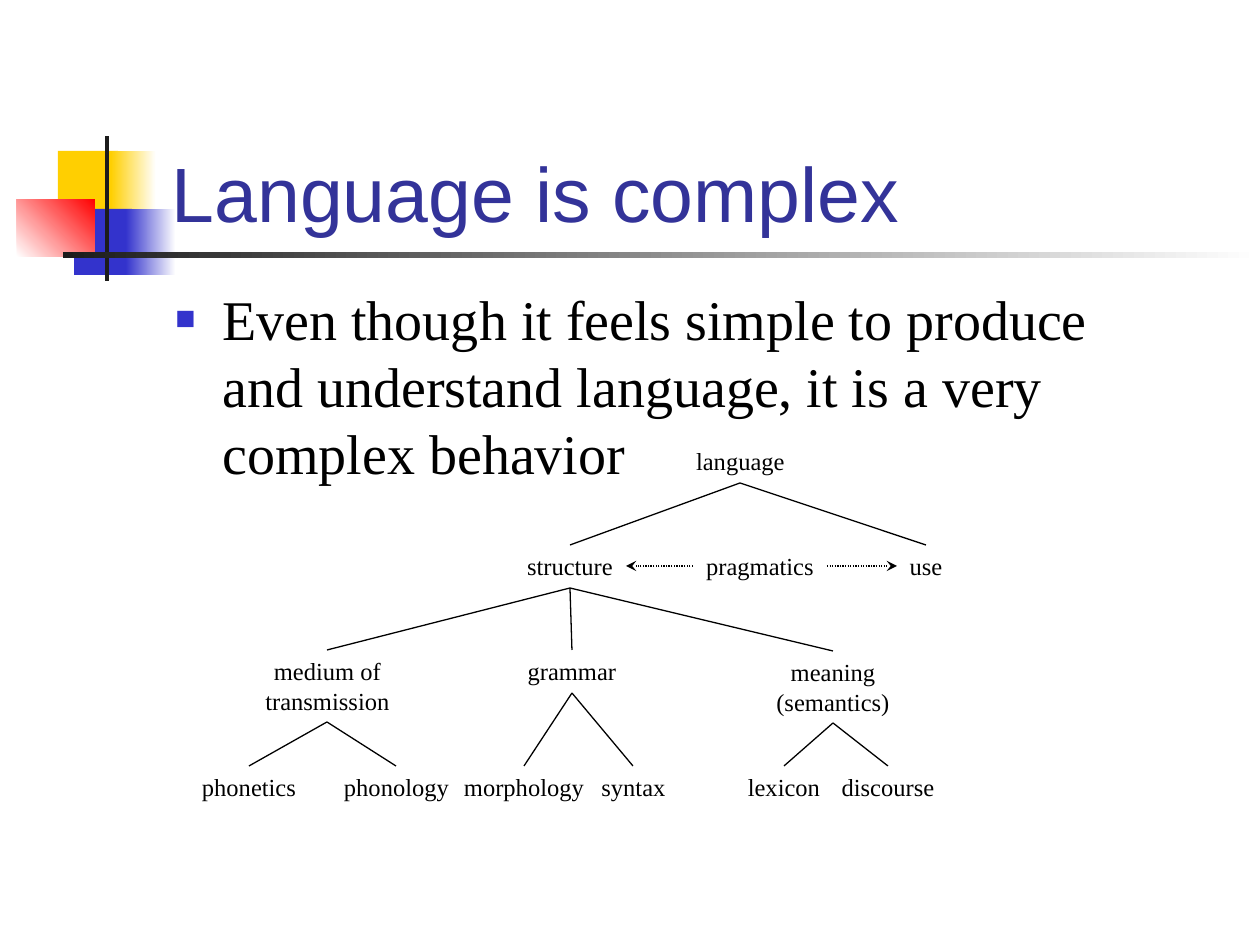
from dataclasses import dataclass

from lxml import etree
from pptx import Presentation
from pptx.dml.color import RGBColor
from pptx.enum.dml import MSO_LINE
from pptx.enum.shapes import MSO_CONNECTOR, MSO_SHAPE
from pptx.enum.text import MSO_ANCHOR, MSO_AUTO_SIZE, PP_ALIGN
from pptx.oxml.ns import qn
from pptx.util import Pt

PX = 914400 / 126
RECTANGLE = MSO_SHAPE.RECTANGLE
STRAIGHT = MSO_CONNECTOR.STRAIGHT
DOTTED = MSO_LINE.ROUND_DOT
BOTTOM = MSO_ANCHOR.BOTTOM
LEFT, CENTER = PP_ALIGN.LEFT, PP_ALIGN.CENTER
FIXED, GROW = MSO_AUTO_SIZE.NONE, MSO_AUTO_SIZE.SHAPE_TO_FIT_TEXT


@dataclass(frozen=True)
class Theme:
    heading_font: str = "Arial"
    body_font: str = "Times New Roman"
    heading_size: int = 44
    body_size: int = 32
    label_size: int = 14
    line_width: float = 0.75
    heading: str = "333399"
    text: str = "000000"
    white: str = "FFFFFF"
    yellow: str = "FFCF01"
    blue: str = "3333CC"
    red: str = "FF0000"
    dark: str = "1C1C1C"


@dataclass(frozen=True)
class Node:
    """A tree label, placed by its centre line and top edge."""
    text: str
    center: int
    top: int
    width: int

    @property
    def height(self):
        return 43 + 29 * self.text.count("\n")

    @property
    def left(self):
        return self.center - self.width // 2

    @property
    def right(self):
        return self.left + self.width

    @property
    def bottom(self):
        return self.top + self.height


def emu(*lengths):
    return [round(length * PX) for length in lengths]


def color(value):
    return RGBColor.from_string(value)


def write(frame, text, *, font, size, fill, align=LEFT):
    """Put each line of text into its own formatted paragraph."""
    for index, line in enumerate(text.split("\n")):
        para = frame.add_paragraph() if index else frame.paragraphs[0]
        para.alignment = align
        span = para.add_run()
        span.text = line
        span.font.name = font
        span.font.size = Pt(size)
        span.font.color.rgb = color(fill)


class Page:
    def __init__(self, slide, theme):
        self.slide, self.theme = slide, theme

    def title(self, text, *bounds):
        box = self.slide.shapes.title
        box.left, box.top, box.width, box.height = emu(*bounds)
        frame = box.text_frame
        frame.vertical_anchor = BOTTOM
        frame.auto_size = FIXED
        write(frame, text, font=self.theme.heading_font,
              size=self.theme.heading_size, fill=self.theme.heading)
        self.slide.shapes._spTree.append(box._element)

    def block(self, bounds, start, end=None, angle=0):
        """Draw a borderless rectangle, fading to a second colour if given."""
        shape = self.slide.shapes.add_shape(RECTANGLE, *emu(*bounds))
        shape.shadow.inherit = False
        shape.line.fill.background()
        if end is None:
            shape.fill.solid()
            shape.fill.fore_color.rgb = color(start)
            return
        shape.fill.gradient()
        shape.fill.gradient_angle = angle
        for stop, value in zip(shape.fill.gradient_stops, (start, end)):
            stop.color.rgb = color(value)

    def bullet(self, text, *bounds):
        frame = self.slide.shapes.add_textbox(*emu(*bounds)).text_frame
        frame.word_wrap = True
        write(frame, text, font=self.theme.body_font,
              size=self.theme.body_size, fill=self.theme.text)
        para = frame.paragraphs[0]
        para.space_before = Pt(self.theme.body_size * 0.2)
        indent, = emu(47)
        properties = para._p.get_or_add_pPr()
        properties.set("marL", str(indent))
        properties.set("indent", str(-indent))
        tint = etree.SubElement(properties, qn("a:buClr"))
        etree.SubElement(tint, qn("a:srgbClr"), val=self.theme.blue)
        etree.SubElement(properties, qn("a:buSzPct"), val="60000")
        etree.SubElement(properties, qn("a:buFont"), typeface=self.theme.heading_font)
        etree.SubElement(properties, qn("a:buChar"), char="■")

    def label(self, node):
        box = self.slide.shapes.add_textbox(
            *emu(node.left, node.top, node.width, node.height))
        frame = box.text_frame
        frame.word_wrap = False
        frame.auto_size = GROW
        write(frame, node.text, font=self.theme.body_font,
              size=self.theme.label_size, fill=self.theme.text, align=CENTER)

    def line(self, *ends, arrow=False):
        """Draw a plain branch, or a dotted arrow."""
        link = self.slide.shapes.add_connector(STRAIGHT, *emu(*ends))
        link.line.color.rgb = color(self.theme.text)
        link.line.width = Pt(self.theme.line_width)
        if arrow:
            link.line.dash_style = DOTTED
            etree.SubElement(link.line._get_or_add_ln(), qn("a:tailEnd"), type="stealth")
        etree.SubElement(link._element.spPr, qn("a:effectLst"))

    def branch(self, parent, child):
        self.line(parent.center, parent.bottom, child.center, child.top)


def main():
    theme = Theme()
    deck = Presentation()
    deck.slide_width, deck.slide_height = emu(1260, 945)
    page = Page(deck.slides.add_slide(deck.slide_layouts[5]), theme)

    page.block((58, 151, 60, 66), theme.yellow)
    page.block((111, 151, 45, 66), theme.yellow, theme.white)
    page.block((74, 209, 58, 66), theme.blue)
    page.block((126, 209, 50, 66), theme.blue, theme.white)
    page.block((17, 199, 78, 58), theme.white, theme.red, angle=45)
    page.block((105, 136, 4, 145), theme.dark)
    page.block((63, 252, 1197, 6), theme.dark, theme.white)

    page.title("Language is complex", 159, 86, 1074, 158)
    page.bullet("Even though it feels simple to produce and understand language, "
                "it is a very complex behavior", 163, 278, 950, 194)

    language = Node("language", 740, 440, 115)
    structure = Node("structure", 570, 545, 112)
    pragmatics = Node("pragmatics", 760, 545, 134)
    use = Node("use", 926, 545, 58)
    medium = Node("medium of\ntransmission", 327, 650, 151)
    grammar = Node("grammar", 572, 650, 116)
    meaning = Node("meaning\n(semantics)", 833, 651, 140)
    leaves = [Node(text, center, 766, width) for text, center, width in (
        ("phonetics", 249, 120), ("phonology", 396, 131),
        ("morphology", 524, 146), ("syntax", 633, 91),
        ("lexicon", 784, 98), ("discourse", 888, 118))]
    topics = [medium, grammar, meaning]

    for node in (language, structure, pragmatics, use, *topics, *leaves):
        page.label(node)
    for child in (structure, use):
        page.branch(language, child)
    for index, topic in enumerate(topics):
        page.branch(structure, topic)
        for leaf in leaves[2 * index:2 * index + 2]:
            page.branch(topic, leaf)

    middle = pragmatics.top + pragmatics.height // 2
    page.line(pragmatics.left, middle, structure.right, middle, arrow=True)
    page.line(pragmatics.right, middle, use.left, middle, arrow=True)

    deck.save("out.pptx")


if __name__ == "__main__":
    main()
